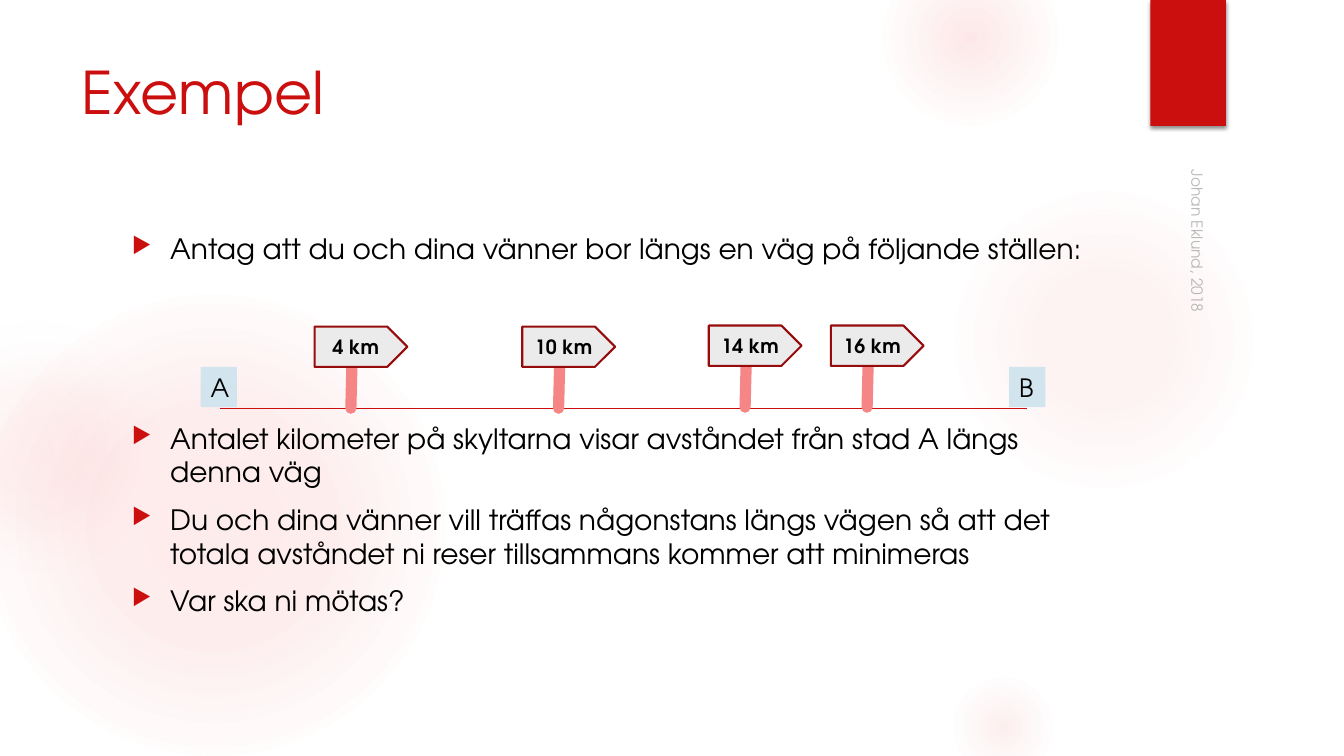
from lxml import etree
from pptx import Presentation
from pptx.dml.color import RGBColor
from pptx.enum.shapes import MSO_CONNECTOR, MSO_SHAPE
from pptx.enum.text import MSO_ANCHOR, PP_ALIGN
from pptx.oxml import parse_xml
from pptx.oxml.ns import qn
from pptx.util import Inches, Pt

STRAIGHT = MSO_CONNECTOR.STRAIGHT
OVAL, RECTANGLE, PLATE = MSO_SHAPE.OVAL, MSO_SHAPE.RECTANGLE, MSO_SHAPE.PENTAGON
TOP, MIDDLE, BOTTOM = MSO_ANCHOR.TOP, MSO_ANCHOR.MIDDLE, MSO_ANCHOR.BOTTOM
LEFT, CENTER = PP_ALIGN.LEFT, PP_ALIGN.CENTER
TITLE_ONLY = 5
FONT = "TeX Gyre Adventor"
DRAWING = 'xmlns:a="http://schemas.openxmlformats.org/drawingml/2006/main"'
COLORS = {
    "red": "CB0F0F", "dark red": "960B0B", "post": "F68585", "glow": "F35C5C",
    "pale": "F3F3F3", "sign": "EBEBEB", "town": "D2E4ED", "black": "000000",
    "grey": "8C8C8C",
}
GLOWS = [
    (-0.17, 2.92, 4.58, (11, 10), 36, 75, "glow"),
    (-0.92, 3.17, 2.58, (8, 5), 36, 71, "pale"),
    (9.41, 1.83, 3.08, (7, 6), 36, 69, "glow"),
    (8.75, -0.5, 1.75, (14, 7), 36, 73, "glow"),
    (9.41, 6.67, 1.08, (10, 5), 31, 66, "glow"),
]
SIGNS = [(3.12, 3.24, "4 km"), (5.18, 3.24, "10 km"),
         (7.03, 3.23, "14 km"), (8.24, 3.23, "16 km")]
TOWNS = [(1.99, "A"), (10.01, "B")]
INTRO = ["Antag att du och dina vänner bor längs en väg på följande ställen:"]
TASK = [
    "Antalet kilometer på skyltarna visar avståndet från stad A längs denna väg",
    "Du och dina vänner vill träffas någonstans längs vägen så att det "
    "totala avståndet ni reser tillsammans kommer att minimeras",
    "Var ska ni mötas?",
]


def rgb(name):
    """Return the named colour."""
    return RGBColor.from_string(COLORS[name])


def add_span(para, text, size, color="black", bold=False):
    """Add one formatted run to a paragraph and return it."""
    span = para.add_run()
    span.text = text
    span.font.name = FONT
    span.font.size = Pt(size)
    span.font.bold = bold
    span.font.color.rgb = rgb(color)
    return span


def add_box(slide, left, top, width, height, anchor=TOP):
    """Add a wrapping text box."""
    box = slide.shapes.add_textbox(Inches(left), Inches(top), Inches(width), Inches(height))
    box.text_frame.word_wrap = True
    box.text_frame.vertical_anchor = anchor
    return box


def add_block(slide, kind, left, top, width, height, fill=None):
    """Add a preset shape without outline or shadow."""
    block = slide.shapes.add_shape(kind, Inches(left), Inches(top), Inches(width), Inches(height))
    if fill:
        block.fill.solid()
        block.fill.fore_color.rgb = rgb(fill)
    block.line.fill.background()
    block.shadow.inherit = False
    return block


def add_glow(slide, left, top, size, alphas, middle, edge, edge_color):
    """Add a circle that fades out from its centre."""
    circle = add_block(slide, OVAL, left, top, size, size)
    stops = [(0, "glow", alphas[0]), (middle, "glow", alphas[1]), (edge, edge_color, 0)]
    marks = "".join(
        f'<a:gs pos="{pos * 1000}"><a:srgbClr val="{COLORS[color]}">'
        f'<a:alpha val="{alpha * 1000}"/></a:srgbClr></a:gs>'
        for pos, color, alpha in stops)
    gradient = parse_xml(
        f'<a:gradFill {DRAWING} rotWithShape="1"><a:gsLst>{marks}</a:gsLst><a:path path="circle">'
        '<a:fillToRect l="50000" t="50000" r="50000" b="50000"/></a:path></a:gradFill>')
    circle.element.spPr.find(qn("a:prstGeom")).addnext(gradient)


def add_ribbon(slide):
    """Add the red ribbon with its soft shadow."""
    ribbon = add_block(slide, RECTANGLE, 11.41, 0, 0.75, 1.25, "red")
    effects = ribbon.element.spPr.find(qn("a:effectLst"))
    effects.append(parse_xml(
        f'<a:outerShdw {DRAWING} blurRad="{Pt(3)}" dist="{Pt(2)}" dir="5400000" rotWithShape="0">'
        '<a:srgbClr val="000000"><a:alpha val="45000"/></a:srgbClr></a:outerShdw>'))


def add_line(slide, start, end, color, weight):
    """Add a straight line and return it."""
    line = slide.shapes.add_connector(
        STRAIGHT, *(Inches(value) for value in (*start, *end)))
    line.line.color.rgb = rgb(color)
    line.line.width = Pt(weight)
    etree.SubElement(line.element.spPr, qn("a:effectLst"))
    return line


def add_sign(slide, left, top, label):
    """Add a road sign on a round-ended post."""
    post = add_line(slide, (left + 0.37, top + 0.4), (left + 0.36, top + 0.81), "post", 8)
    post.element.spPr.find(qn("a:ln")).set("cap", "rnd")
    sign = add_block(slide, PLATE, left, top, 0.92, 0.4, "sign")
    sign.line.color.rgb = rgb("dark red")
    sign.line.width = Pt(1.5)
    sign.text_frame.vertical_anchor = MIDDLE
    para = sign.text_frame.paragraphs[0]
    para.alignment = CENTER
    add_span(para, label, 14, bold=True)


def add_town(slide, left, label):
    """Add a lettered square for a town."""
    town = add_block(slide, RECTANGLE, left, 3.64, 0.36, 0.4, "town")
    town.text_frame.word_wrap = False
    town.text_frame.vertical_anchor = TOP
    para = town.text_frame.paragraphs[0]
    para.alignment = LEFT
    add_span(para, label, 18)


def add_bullets(slide, top, height, texts):
    """Add a list with red triangle bullets."""
    frame = add_box(slide, 1.21, top, 9.78, height).text_frame
    for index, text in enumerate(texts):
        para = frame.add_paragraph() if index else frame.paragraphs[0]
        props = para._p.get_or_add_pPr()
        props.set("marL", str(Inches(0.38)))
        props.set("indent", str(Inches(-0.38)))
        color = etree.SubElement(props, qn("a:buClr"))
        etree.SubElement(color, qn("a:srgbClr"), val=COLORS["red"])
        etree.SubElement(props, qn("a:buSzPct"), val="80000")
        etree.SubElement(props, qn("a:buChar"), char="▶")
        para.space_before = Pt(4 if index else 0)
        para.space_after = Pt(6)
        add_span(para, text, 20)


def set_title(slide, text):
    """Place and format the slide title."""
    title = slide.shapes.title
    title.left, title.top = Inches(0.71), Inches(0.5)
    title.width, title.height = Inches(10.29), Inches(1.53)
    title.text_frame.vertical_anchor = TOP
    para = title.text_frame.paragraphs[0]
    para.alignment = LEFT
    add_span(para, text, 42, "red")


def add_credit(slide, text):
    """Add the rotated, half-transparent author line."""
    box = add_box(slide, 9.79, 3.53, 4.22, 0.33, BOTTOM)
    box.rotation = 90
    span = add_span(box.text_frame.paragraphs[0], text, 11, "grey")
    color = span._r.rPr.find(qn("a:solidFill")).find(qn("a:srgbClr"))
    etree.SubElement(color, qn("a:alpha"), val="60000")


def main():
    """Build the slide and save the deck."""
    deck = Presentation()
    deck.slide_width, deck.slide_height = Inches(13.33), Inches(7.5)
    slide = deck.slides.add_slide(deck.slide_layouts[TITLE_ONLY])
    for glow in GLOWS:
        add_glow(slide, *glow)
    add_ribbon(slide)
    set_title(slide, "Exempel")
    add_bullets(slide, 2.25, 0.5, INTRO)
    add_bullets(slide, 4.13, 2.7, TASK)
    add_line(slide, (2.18, 4.05), (10.19, 4.05), "red", 0.75)
    for sign in SIGNS:
        add_sign(slide, *sign)
    for town in TOWNS:
        add_town(slide, *town)
    add_credit(slide, "Johan Eklund, 2018")
    deck.save("out.pptx")


if __name__ == "__main__":
    main()
